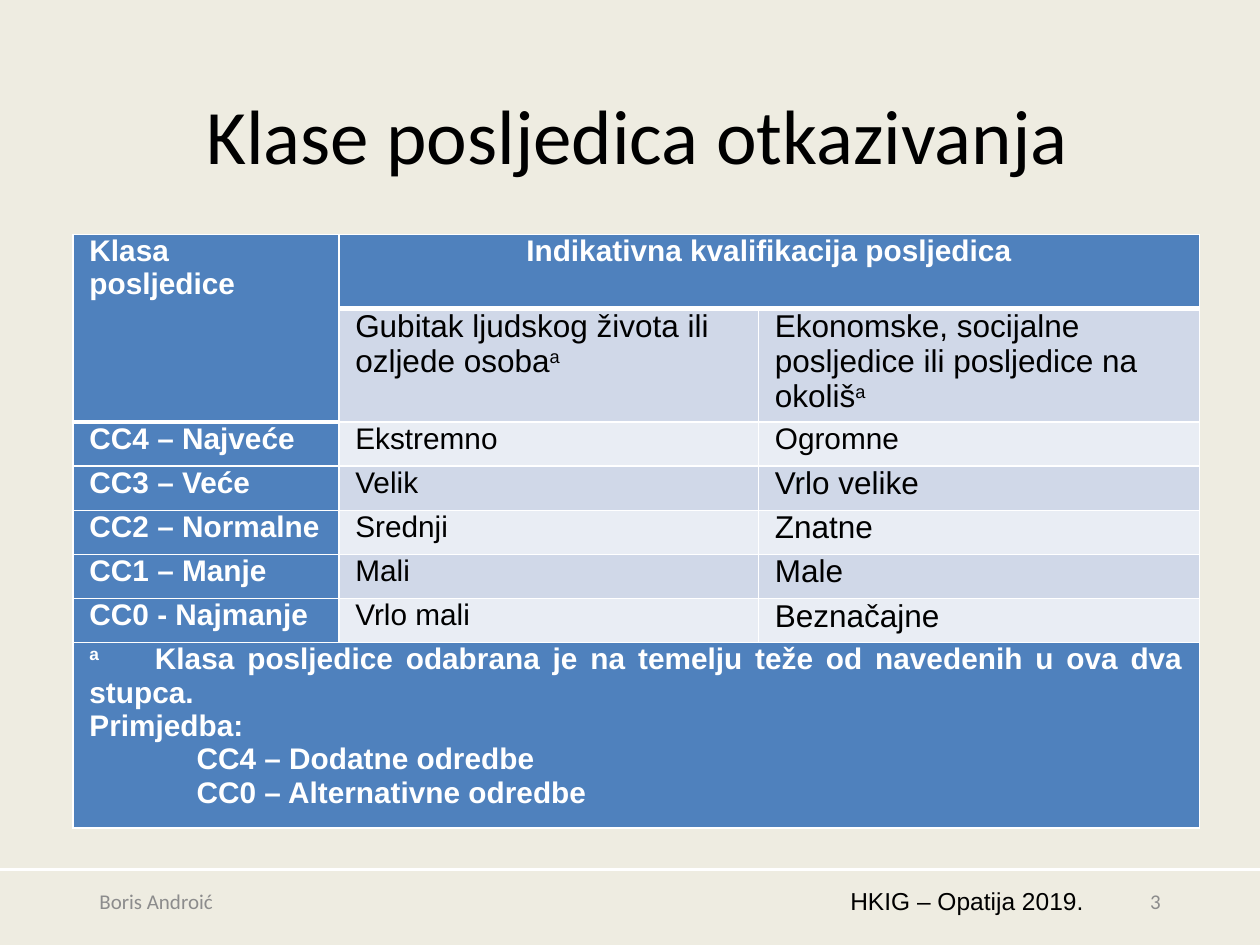
from lxml import etree
from pptx import Presentation
from pptx import util as u
from pptx.dml.color import RGBColor
from pptx.enum import shapes, text
from pptx.oxml import ns

SAND = RGBColor(0xEE, 0xEC, 0xE1)
WHITE = RGBColor(0xFF, 0xFF, 0xFF)
BLACK = RGBColor(0, 0, 0)
GREY = RGBColor(0x8C, 0x8C, 0x8C)
BLUE = RGBColor(0x4F, 0x81, 0xBD)
DARK = RGBColor(0xD0, 0xD8, 0xE8)
LIGHT = RGBColor(0xE9, 0xED, 0xF4)

LEFT, MID, RIGHT, FULL = (text.PP_ALIGN.LEFT, text.PP_ALIGN.CENTER,
                          text.PP_ALIGN.RIGHT, text.PP_ALIGN.JUSTIFY)
TOP, HALF = text.MSO_ANCHOR.TOP, text.MSO_ANCHOR.MIDDLE

COLS = [2.11, 3.33, 3.5]
ROWS = [0.59, 0.59] + [0.35] * 5 + [1.47]
HEAVY = {(0, 0), (1, 0), (0, 1), (0, 2)}
RANKS = [
    ("CC4 – Najveće", "Ekstremno", "Ogromne"),
    ("CC3 – Veće", "Velik", "Vrlo velike"),
    ("CC2 – Normalne", "Srednji", "Znatne"),
    ("CC1 – Manje", "Mali", "Male"),
    ("CC0 - Najmanje", "Vrlo mali", "Beznačajne"),
]


class Deck:
    def __init__(self):
        self.prs = Presentation()
        self.prs.slide_width = u.Inches(10)
        self.prs.slide_height = u.Inches(7.5)
        self.slide = self.prs.slides.add_slide(self.prs.slide_layouts[6])
        fill = self.slide.background.fill
        fill.solid()
        fill.fore_color.rgb = SAND

    def style(self, para, size, color, align=LEFT, bold=False, face="Arial"):
        para.alignment = align
        font = para.font
        font.name, font.size, font.bold = face, u.Pt(size), bold
        font.color.rgb = color

    def label(self, words, box, size, color, align=LEFT, face="Calibri",
              anchor=HALF, after=None, lines=None):
        shape = self.slide.shapes.add_textbox(*map(u.Inches, box))
        frame = shape.text_frame
        frame.word_wrap = True
        frame.vertical_anchor = anchor
        para = frame.paragraphs[0]
        para.add_run().text = words
        if after:
            para.space_after = u.Pt(after)
        if lines:
            para.line_spacing = lines
        self.style(para, size, color, align, face=face)

    def rule(self, y):
        line = self.slide.shapes.add_connector(
            shapes.MSO_CONNECTOR.STRAIGHT, 0, u.Inches(y), u.Inches(10), u.Inches(y))
        line.line.color.rgb = WHITE
        line.line.width = u.Pt(1.5)
        etree.SubElement(line._element.spPr, ns.qn("a:effectLst"))

    def grid(self, left, top):
        frame = self.slide.shapes.add_table(
            len(ROWS), len(COLS), u.Inches(left), u.Inches(top),
            u.Inches(sum(COLS)), u.Inches(sum(ROWS)))
        table = frame.table
        table.first_row = table.horz_banding = False
        for col, wide in zip(table.columns, COLS):
            col.width = u.Inches(wide)
        for row, high in zip(table.rows, ROWS):
            row.height = u.Inches(high)
        for r in range(len(ROWS)):
            for c in range(len(COLS)):
                head = c == 0 or r in (0, len(ROWS) - 1)
                tint = BLUE if head else DARK if r % 2 else LIGHT
                self.cell(table.cell(r, c), r, c, tint)
        table.cell(0, 0).merge(table.cell(1, 0))
        table.cell(0, 1).merge(table.cell(0, 2))
        table.cell(7, 0).merge(table.cell(7, 2))
        return table

    def cell(self, cell, r, c, tint):
        cell.margin_left = cell.margin_right = u.Inches(0.13)
        cell.margin_top = cell.margin_bottom = 0
        cell.fill.solid()
        cell.fill.fore_color.rgb = tint
        widths = {"L": 1, "R": 1, "T": 3 if (r - 1, c) in HEAVY else 1,
                  "B": 3 if (r, c) in HEAVY else 1}
        props = cell._tc.get_or_add_tcPr()
        for i, (side, width) in enumerate(widths.items()):
            edge = etree.Element(ns.qn(f"a:ln{side}"), w=str(u.Pt(width)))
            solid = etree.SubElement(edge, ns.qn("a:solidFill"))
            etree.SubElement(solid, ns.qn("a:srgbClr"), val=str(WHITE))
            props.insert(i, edge)

    def prose(self, para, parts, size, color, align=LEFT, bold=False,
              indent=0, tab=0):
        for words, high in parts:
            run = para.add_run()
            run.text = words
            if high:
                run._r.get_or_add_rPr().set("baseline", "30000")
        props = para._p.get_or_add_pPr()
        if indent:
            props.set("marL", str(u.Inches(indent)))
        if tab:
            tabs = etree.SubElement(props, ns.qn("a:tabLst"))
            etree.SubElement(tabs, ns.qn("a:tab"), pos=str(u.Inches(tab)), algn="l")
        self.style(para, size, color, align, bold)


def main():
    deck = Deck()
    deck.rule(6.9)
    deck.label("HKIG – Opatija 2019.", (6.57, 6.98, 2.13, 0.52), 14, BLACK,
               RIGHT, "Arial", TOP)
    deck.label("Klase posljedica otkazivanja", (0.46, 0.7, 9.2, 0.81), 44,
               BLACK, MID, lines=0.9)
    deck.label("Boris Androić", (0.69, 6.95, 2.25, 0.4), 12, GREY, after=6)
    deck.label("3", (7.06, 6.95, 2.25, 0.4), 12, GREY, RIGHT, after=6)

    table = deck.grid(0.58, 1.86)

    def put(r, c, parts, *look):
        deck.prose(table.cell(r, c).text_frame.paragraphs[0], parts, *look)

    put(0, 0, [("Klasa posljedice", False)], 17, WHITE, FULL, True)
    put(0, 1, [("Indikativna kvalifikacija posljedica", False)], 17, WHITE, MID, True)
    heads = ["Gubitak ljudskog života ili ozljede osoba",
             "Ekonomske, socijalne posljedice ili posljedice na okoliš"]
    for c, words in enumerate(heads, 1):
        put(1, c, [(words, False), ("a", True)], 18, BLACK)
    for r, (rank, loss, harm) in enumerate(RANKS, 2):
        put(r, 0, [(rank, False)], 17, WHITE, FULL, True)
        put(r, 1, [(loss, False)], 17, BLACK, FULL)
        put(r, 2, [(harm, False)], 17 if r == 2 else 18, BLACK)

    note = ("\tKlasa posljedice odabrana je na temelju teže od "
            "navedenih u ova dva stupca.")
    notes = [
        ([("a", True), (note, False)], 0, 0.52),
        ([("Primjedba:", False)], 0, 0),
        ([("CC4 – Dodatne odredbe", False)], 0.85, 0),
        ([("CC0 – Alternativne odredbe", False)], 0.85, 0),
    ]
    frame = table.cell(7, 0).text_frame
    for i, (parts, indent, tab) in enumerate(notes):
        para = frame.add_paragraph() if i else frame.paragraphs[0]
        deck.prose(para, parts, 17, WHITE, FULL, True, indent, tab)

    deck.prs.save("out.pptx")


if __name__ == "__main__":
    main()
